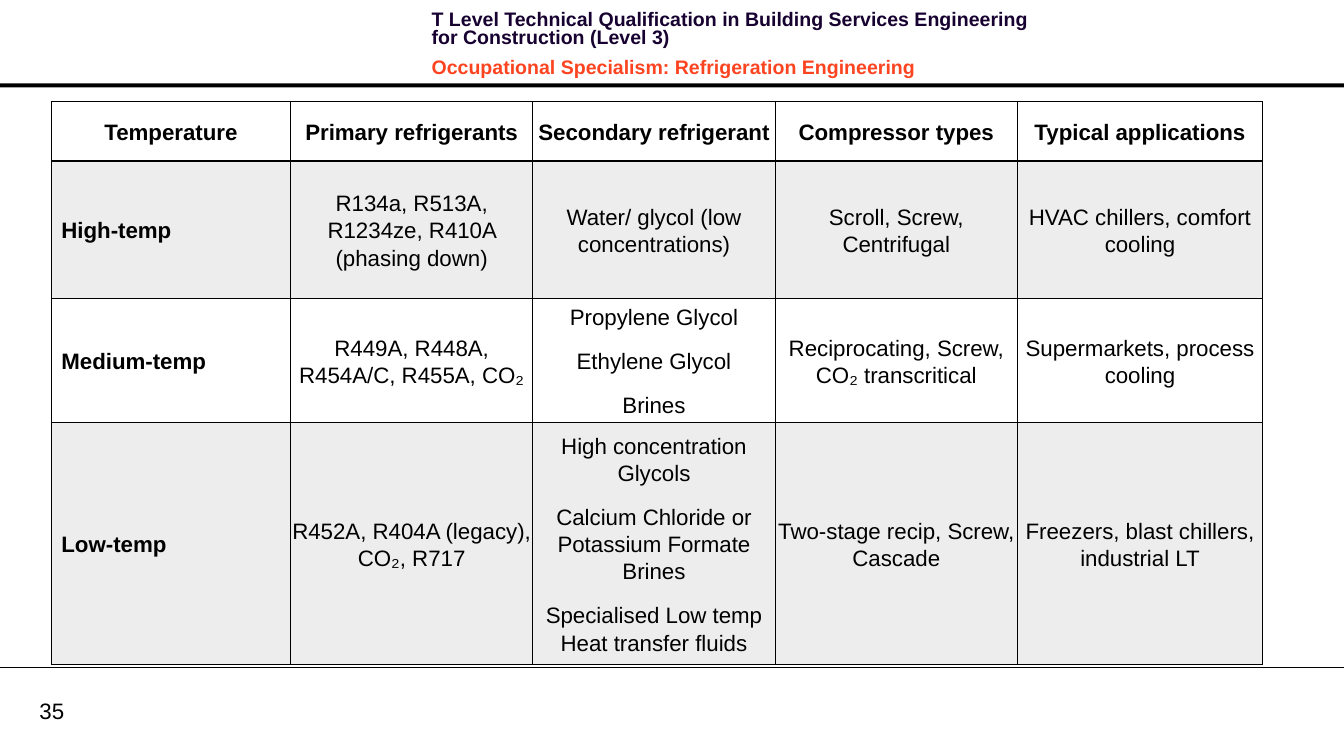
from lxml.etree import SubElement
from pptx import Presentation
from pptx.dml.color import RGBColor
from pptx.enum.shapes import MSO_CONNECTOR, MSO_SHAPE
from pptx.enum.text import MSO_ANCHOR, MSO_AUTO_SIZE, PP_ALIGN
from pptx.oxml import parse_xml
from pptx.oxml.ns import nsdecls, qn
from pptx.util import Cm, Pt

BLACK = RGBColor(0x00, 0x00, 0x00)
NAVY = RGBColor(0x17, 0x01, 0x30)
ORANGE = RGBColor(0xFC, 0x44, 0x21)
GREY = RGBColor(0xA6, 0xA6, 0xA6)
GREY_OPACITY = 20000

SLIDE_WIDTH, SLIDE_HEIGHT = Cm(34), Cm(19)
CELL_MARGIN = Cm(0.03)

HEADINGS = ["Temperature", "Primary refrigerants", "Secondary refrigerant",
            "Compressor types", "Typical applications"]
# Each newline inside a cell starts a new paragraph.
RANGES = [
    ["High-temp", "R134a, R513A, R1234ze, R410A (phasing down)",
     "Water/ glycol (low concentrations)", "Scroll, Screw, Centrifugal",
     "HVAC chillers, comfort cooling"],
    ["Medium‑temp", "R449A, R448A, R454A/C, R455A, CO₂",
     "Propylene Glycol\nEthylene Glycol\nBrines",
     "Reciprocating, Screw, CO₂ transcritical", "Supermarkets, process cooling"],
    ["Low‑temp", "R452A, R404A (legacy), CO₂, R717",
     "High concentration Glycols\nCalcium Chloride or Potassium Formate Brines\n"
     "Specialised Low temp Heat transfer fluids",
     "Two‑stage recip, Screw, Cascade", "Freezers, blast chillers, industrial LT"],
]
COLUMN_WIDTHS = [Cm(6.05), Cm(6.13), Cm(6.13), Cm(6.13), Cm(6.2)]
ROW_HEIGHTS = [Cm(1.5), Cm(3.49), Cm(3.13), Cm(6.1)]


def write_paragraph(para, text, size=16, color=BLACK, bold=False,
                    align=PP_ALIGN.LEFT, line_spacing=None, before=0, after=0):
    para.alignment = align
    para.space_before, para.space_after = Pt(before), Pt(after)
    if line_spacing:
        para.line_spacing = line_spacing
    span = para.add_run()
    span.text = text
    span.font.name, span.font.size, span.font.bold = "Arial", Pt(size), bold
    span.font.color.rgb = color


def add_header(page, left, top, width, height):
    box = page.shapes.add_textbox(left, top, width, height)
    frame = box.text_frame
    frame.word_wrap = True
    line = {"size": 14, "bold": True, "line_spacing": Pt(13.1), "after": 4}
    write_paragraph(
        frame.paragraphs[0],
        "T Level Technical Qualification in Building Services Engineering "
        "for Construction (Level 3)", color=NAVY, **line)
    write_paragraph(frame.add_paragraph(),
                    "Occupational Specialism: Refrigeration Engineering",
                    color=ORANGE, before=4, **line)


def add_header_bar(page, left, top, width, height):
    bar = page.shapes.add_shape(MSO_SHAPE.RECTANGLE, left, top, width, height)
    bar.shadow.inherit = False
    bar.fill.solid()
    bar.fill.fore_color.rgb = BLACK
    bar.line.fill.background()


def add_footer(page, left, top, width):
    rule = page.shapes.add_connector(MSO_CONNECTOR.STRAIGHT, left, top, left + width, top)
    rule.line.color.rgb = BLACK
    rule.line.width = Pt(0.75)
    SubElement(rule._element.spPr, qn("a:effectLst"))

    number = page.shapes.add_textbox(left + Cm(1), top + Cm(0.74), Cm(1.63), Cm(0.69))
    frame = number.text_frame
    frame.margin_left = frame.margin_right = frame.margin_top = frame.margin_bottom = 0
    frame.word_wrap = True
    frame.auto_size = MSO_AUTO_SIZE.SHAPE_TO_FIT_TEXT
    frame.vertical_anchor = MSO_ANCHOR.MIDDLE
    write_paragraph(frame.paragraphs[0], "35")


def fill_cell(cell, shaded):
    if not shaded:
        cell.fill.background()
        return
    cell.fill.solid()
    cell.fill.fore_color.rgb = GREY
    tint = cell._tc.tcPr.find(".//" + qn("a:srgbClr"))
    SubElement(tint, qn("a:alpha"), val=str(GREY_OPACITY))


def border_cell(cell, top, bottom):
    """Draw all four borders in black; top and bottom are widths in points."""
    sides = {"lnL": 1, "lnR": 1, "lnT": top, "lnB": bottom}
    for place, (side, width) in enumerate(sides.items()):
        cell._tc.tcPr.insert(place, parse_xml(
            f'<a:{side} {nsdecls("a")} w="{Pt(width)}"><a:solidFill>'
            f'<a:srgbClr val="{BLACK}"/></a:solidFill></a:{side}>'))


def add_refrigerant_table(page, left, top):
    rows = [HEADINGS] + RANGES
    table = page.shapes.add_table(len(rows), len(HEADINGS), left, top,
                                  sum(COLUMN_WIDTHS), sum(ROW_HEIGHTS)).table
    table.first_row = table.horz_banding = False
    for column, width in zip(table.columns, COLUMN_WIDTHS):
        column.width = width
    for row, height in zip(table.rows, ROW_HEIGHTS):
        row.height = height

    for r, texts in enumerate(rows):
        heading = r == 0
        for c, text in enumerate(texts):
            cell = table.cell(r, c)
            row_label = c == 0 and not heading
            cell.vertical_anchor = MSO_ANCHOR.MIDDLE
            if not row_label:
                cell.margin_left = cell.margin_right = CELL_MARGIN
                cell.margin_top = cell.margin_bottom = CELL_MARGIN
            fill_cell(cell, shaded=r % 2 == 1)
            border_cell(cell, top=2 if r == 1 else 1, bottom=2 if heading else 1)
            frame = cell.text_frame
            for i, part in enumerate(text.split("\n")):
                write_paragraph(
                    frame.add_paragraph() if i else frame.paragraphs[0], part,
                    bold=heading or row_label,
                    align=PP_ALIGN.LEFT if row_label else PP_ALIGN.CENTER,
                    line_spacing=1.15 if heading else 1.1,
                    after=8 if heading else 12)


def main():
    deck = Presentation()
    deck.slide_width, deck.slide_height = SLIDE_WIDTH, SLIDE_HEIGHT
    page = deck.slides.add_slide(deck.slide_layouts[6])
    add_header_bar(page, 0, Cm(2.11), SLIDE_WIDTH, Cm(0.1))
    add_header(page, Cm(10.67), Cm(0.18), Cm(16.23), Cm(1.63))
    add_footer(page, 0, Cm(16.89), SLIDE_WIDTH)
    add_refrigerant_table(page, Cm(1.3), Cm(2.57))
    deck.save("out.pptx")


if __name__ == "__main__":
    main()
